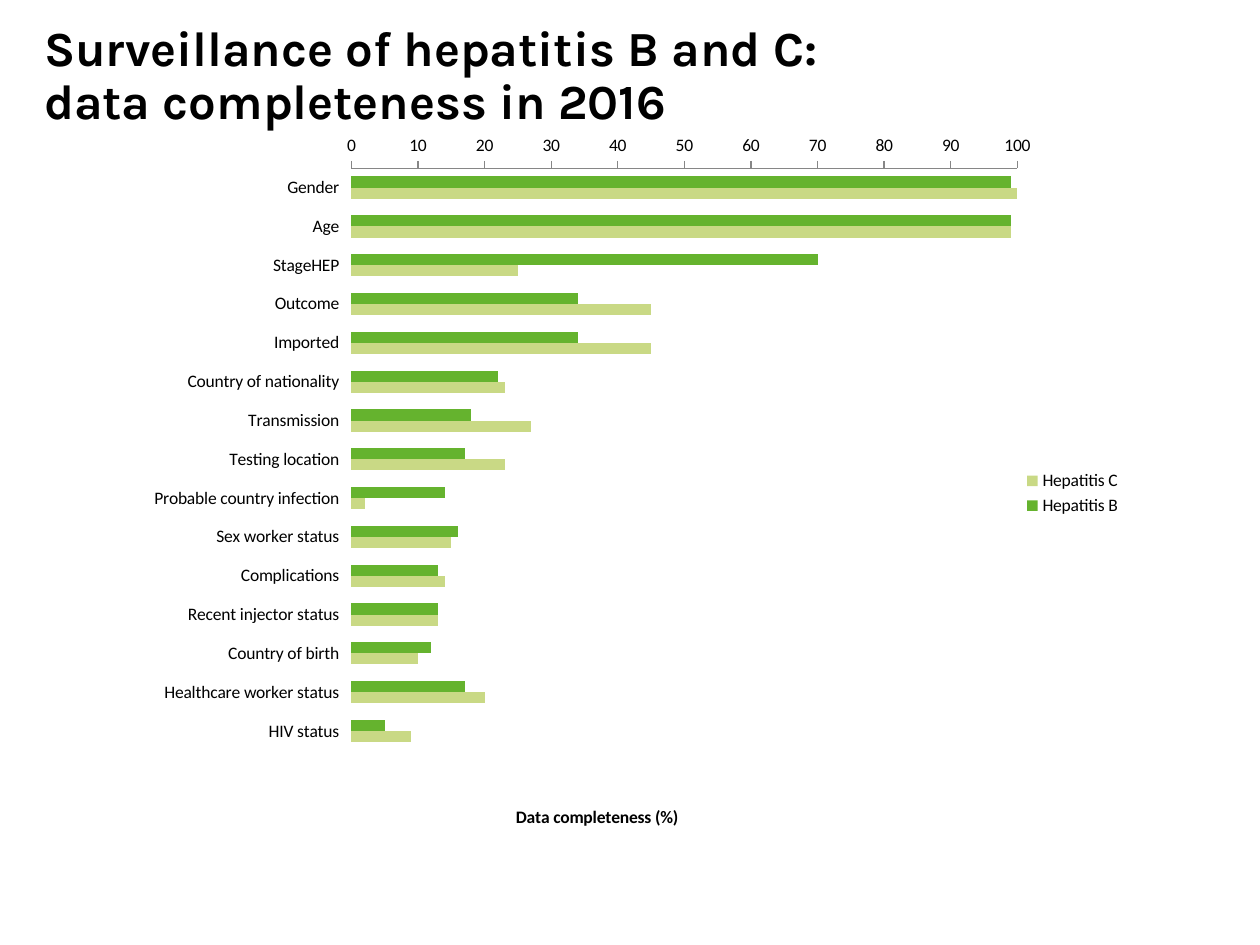
from dataclasses import dataclass

from lxml.etree import SubElement
from pptx import Presentation
from pptx.chart.data import CategoryChartData
from pptx.dml.color import RGBColor
from pptx.enum.chart import (XL_AXIS_CROSSES, XL_CHART_TYPE,
                             XL_LEGEND_POSITION, XL_TICK_MARK)
from pptx.enum.text import MSO_ANCHOR
from pptx.oxml.ns import qn
from pptx.util import Inches, Pt


@dataclass(frozen=True)
class Theme:
    ink: RGBColor = RGBColor(0, 0, 0)
    axis: RGBColor = RGBColor(0x86, 0x86, 0x86)
    head: str = "Karla"
    body: str = "Calibri"
    big: Pt = Pt(28)
    small: Pt = Pt(10)


@dataclass(frozen=True)
class Series:
    name: str
    color: str
    vals: tuple[int, ...]


THEME = Theme()
CATS = ("Gender", "Age", "StageHEP", "Outcome", "Imported",
        "Country of nationality", "Transmission", "Testing location",
        "Probable country infection", "Sex worker status", "Complications",
        "Recent injector status", "Country of birth",
        "Healthcare worker status", "HIV status")
SERIES = (
    Series("Hepatitis B", "65B32E",
           (99, 99, 70, 34, 34, 22, 18, 17, 14, 16, 13, 13, 12, 17, 5)),
    Series("Hepatitis C", "C9D985",
           (100, 99, 25, 45, 45, 23, 27, 23, 2, 15, 14, 13, 10, 20, 9)),
)


def style(font, size: Pt, name: str, bold: bool) -> None:
    font.size, font.name, font.bold = size, name, bold
    font.color.rgb = THEME.ink


def place(owner, **parts) -> None:
    """Give a chart part a manual layout, in shares of the chart."""
    old = owner.find(qn("c:layout"))
    if old is None:
        old = SubElement(owner, qn("c:layout"))
        first = owner.find(qn("c:tx"))
        if first is not None:
            first.addnext(old)
        else:
            owner.insert(0, old)
    for child in list(old):
        old.remove(child)
    box = SubElement(old, qn("c:manualLayout"))
    for key, val in parts.items():
        SubElement(box, qn(f"c:{key}")).set("val", str(val))


def add_title(slide) -> None:
    box = slide.shapes.add_textbox(Inches(0.35), Inches(0.16),
                                   Inches(9.06), Inches(0.91))
    frame = box.text_frame
    frame.word_wrap = True
    frame.vertical_anchor = MSO_ANCHOR.MIDDLE
    frame.margin_left = frame.margin_right = 0
    frame.margin_top = frame.margin_bottom = 0
    para = frame.paragraphs[0]
    para.text = "Surveillance of hepatitis B and C: \vdata completeness in 2016"
    para.line_spacing = 0.9
    style(para.font, THEME.big, THEME.head, True)


def add_bars(slide) -> None:
    data = CategoryChartData()
    data.categories = CATS
    for item in SERIES:
        data.add_series(item.name, item.vals)
    chart = slide.shapes.add_chart(
        XL_CHART_TYPE.BAR_CLUSTERED, Inches(0.35), Inches(0.99),
        Inches(8.65), Inches(5.85), data).chart
    style(chart.font, THEME.small, THEME.body, False)

    # Bars
    plot = chart.plots[0]
    plot.gap_width, plot.overlap = 150, 0
    plot.vary_by_categories = False
    for bars, item in zip(plot.series, SERIES):
        bars.format.fill.solid()
        bars.format.fill.fore_color.rgb = RGBColor.from_string(item.color)
    area = chart._chartSpace.chart.plotArea
    place(area, layoutTarget="inner", xMode="edge", yMode="edge",
          x=0.282, y=0.059, w=0.611, h=0.79)

    # Axes: categories run down, values sit at the bottom
    cat, val = chart.category_axis, chart.value_axis
    cat.reverse_order = True
    cat.crosses = XL_AXIS_CROSSES.MAXIMUM
    cat.format.line.fill.background()
    val.minimum_scale, val.maximum_scale, val.major_unit = 0, 100, 10
    val.has_major_gridlines = False
    val.format.line.color.rgb = THEME.axis
    for axis in (cat, val):
        axis.major_tick_mark = XL_TICK_MARK.OUTSIDE

    # Caption below the axis
    chart.has_title = True
    title = chart.chart_title
    title.include_in_layout = False
    para = title.text_frame.paragraphs[0]
    para.text = "Data completeness (%)"
    style(para.font, THEME.small, THEME.body, True)
    place(title._element, xMode="edge", yMode="edge", x=0.43, y=0.92)

    # Legend
    chart.has_legend = True
    chart.legend.position = XL_LEGEND_POSITION.RIGHT
    chart.legend.include_in_layout = False


def main() -> None:
    deck = Presentation()
    deck.slide_width, deck.slide_height = Inches(10), Inches(7.5)
    slide = deck.slides.add_slide(deck.slide_layouts[6])
    add_bars(slide)
    add_title(slide)
    deck.save("out.pptx")


if __name__ == "__main__":
    main()
